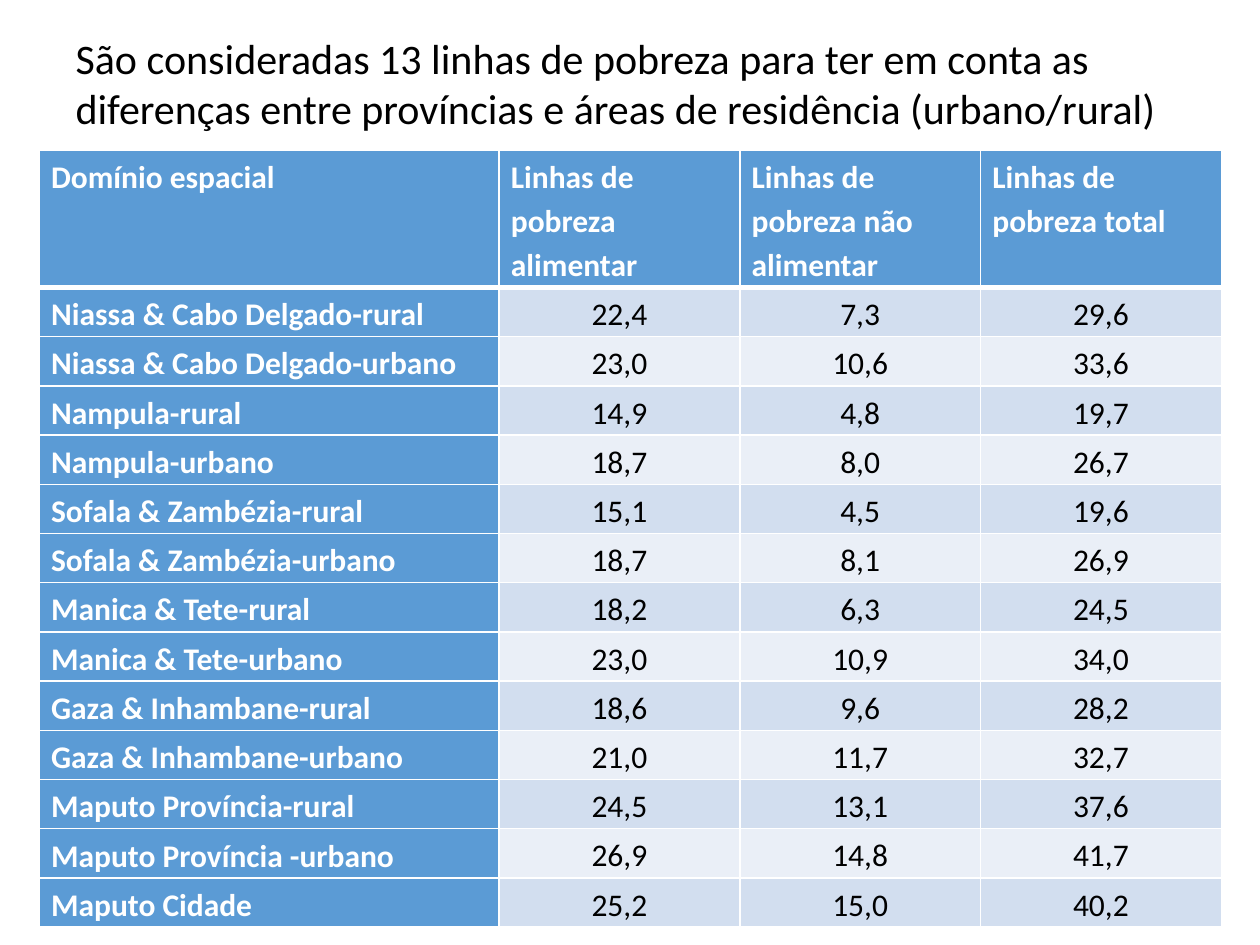
from lxml import etree
from pptx import Presentation
from pptx.dml.color import RGBColor
from pptx.enum.text import MSO_ANCHOR, PP_ALIGN
from pptx.oxml.ns import qn
from pptx.util import Cm, Pt

TOP, MIDDLE, BOTTOM = MSO_ANCHOR.TOP, MSO_ANCHOR.MIDDLE, MSO_ANCHOR.BOTTOM
LEFT, CENTER, JUSTIFY = PP_ALIGN.LEFT, PP_ALIGN.CENTER, PP_ALIGN.JUSTIFY
FONT = "Calibri"
BLUE, BAND_DARK, BAND_LIGHT = "5B9BD5", "D2DEEF", "EAEFF7"
WHITE, BLACK = "FFFFFF", "000000"

TITLE = ("São consideradas 13 linhas de pobreza para ter em conta as "
         "diferenças entre províncias e áreas de residência (urbano/rural)")
HEADER = ("Domínio espacial", "Linhas de pobreza alimentar",
          "Linhas de pobreza não alimentar", "Linhas de pobreza total")
POVERTY_LINES = [
    ("Niassa & Cabo Delgado-rural", "22,4", "7,3", "29,6"),
    ("Niassa & Cabo Delgado-urbano", "23,0", "10,6", "33,6"),
    ("Nampula-rural", "14,9", "4,8", "19,7"),
    ("Nampula-urbano", "18,7", "8,0", "26,7"),
    ("Sofala & Zambézia-rural", "15,1", "4,5", "19,6"),
    ("Sofala & Zambézia-urbano", "18,7", "8,1", "26,9"),
    ("Manica & Tete-rural", "18,2", "6,3", "24,5"),
    ("Manica & Tete-urbano", "23,0", "10,9", "34,0"),
    ("Gaza & Inhambane-rural", "18,6", "9,6", "28,2"),
    ("Gaza & Inhambane-urbano", "21,0", "11,7", "32,7"),
    ("Maputo Província-rural", "24,5", "13,1", "37,6"),
    ("Maputo Província -urbano", "26,9", "14,8", "41,7"),
    ("Maputo Cidade", "25,2", "15,0", "40,2"),
]


def rgb(value):
    """Turn a hex string into a colour."""
    return RGBColor.from_string(value)


def format_font(font, size, color, bold=False):
    """Set the typeface, size, colour and weight of a font."""
    font.name, font.size, font.bold = FONT, Pt(size), bold
    font.color.rgb = rgb(color)


def set_borders(cell, top=1, bottom=1):
    """Draw white borders round a cell, with widths in points."""
    tcPr = cell._tc.get_or_add_tcPr()
    for side, width in (("L", 1), ("R", 1), ("T", top), ("B", bottom)):
        ln = etree.SubElement(tcPr, qn(f"a:ln{side}"), w=str(Pt(width)))
        fill = etree.SubElement(ln, qn("a:solidFill"))
        etree.SubElement(fill, qn("a:srgbClr"), val=WHITE)


def format_cell(cell, text, row, col):
    """Fill in one cell and style it by its row and column."""
    is_label = row == 0 or col == 0
    set_borders(cell, top=3 if row == 1 else 1, bottom=3 if row == 0 else 1)
    cell.fill.solid()
    cell.fill.fore_color.rgb = rgb(
        BLUE if is_label else BAND_DARK if row % 2 else BAND_LIGHT)
    cell.margin_left = cell.margin_right = Cm(0.24)
    cell.margin_top = cell.margin_bottom = Cm(0.05)
    cell.vertical_anchor = BOTTOM if row and col == 0 else TOP
    p = cell.text_frame.paragraphs[0]
    p.text = text
    p.alignment = LEFT if row == 0 else JUSTIFY if col == 0 else CENTER
    p.line_spacing = 1.15
    format_font(p.runs[0].font, 18, WHITE if is_label else BLACK, is_label)


def add_title(s, left, top, width, height):
    """Place and format the slide title."""
    sp = s.shapes.title
    sp.left, sp.top, sp.width, sp.height = left, top, width, height
    tf = sp.text_frame
    tf.text = TITLE
    tf.word_wrap = True
    tf.vertical_anchor = MIDDLE
    tf.margin_bottom = Cm(1.14)
    p = tf.paragraphs[0]
    p.alignment = LEFT
    format_font(p.runs[0].font, 24, BLACK)


def add_poverty_table(s, left, top, width, height):
    """Add the table of poverty lines by spatial domain."""
    rows = [HEADER] + POVERTY_LINES
    frame = s.shapes.add_table(len(rows), len(HEADER), left, top, width, height)
    table = frame.table
    table.first_col = True
    label_width = Cm(9.27)
    value_width = (width - label_width) // (len(HEADER) - 1)
    for col, column in enumerate(table.columns):
        column.width = value_width if col else label_width
    for row, values in enumerate(rows):
        table.rows[row].height = Cm(0.81 if row else 2.26)
        for col, text in enumerate(values):
            format_cell(table.cell(row, col), text, row, col)
    frame.height = height


def main():
    """Build the slide and save it."""
    prs = Presentation()
    prs.slide_width, prs.slide_height = Cm(25.4), Cm(19.05)
    s = prs.slides.add_slide(prs.slide_layouts[5])
    add_title(s, Cm(1.27), Cm(0.58), Cm(22.86), Cm(3.18))
    add_poverty_table(s, Cm(0.79), Cm(3.02), Cm(23.83), Cm(15.72))
    prs.save("out.pptx")


if __name__ == "__main__":
    main()
